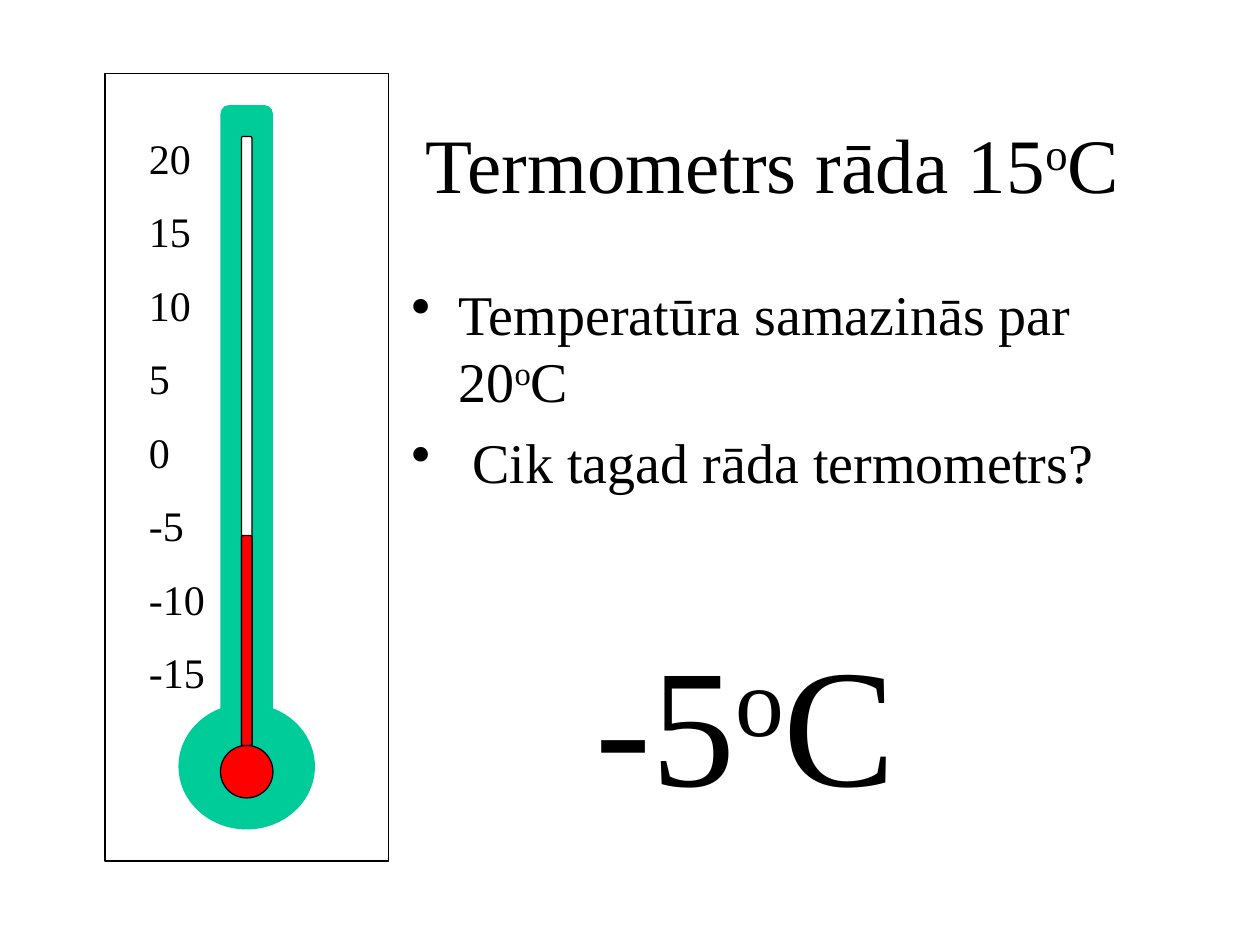
import dataclasses

import pptx
import pptx.dml.color
import pptx.enum.shapes
import pptx.enum.text
import pptx.util
from lxml import etree

Pt = pptx.util.Pt
Shape = pptx.enum.shapes.MSO_SHAPE
Align = pptx.enum.text.PP_ALIGN
Anchor = pptx.enum.text.MSO_ANCHOR
RGB = pptx.dml.color.RGBColor.from_string
DRAWING = "{http://schemas.openxmlformats.org/drawingml/2006/main}"


@dataclasses.dataclass(frozen=True)
class Theme:
    font: str = "Times New Roman"
    ink: str = "000000"
    paper: str = "FFFFFF"
    glass: str = "00CC99"
    mercury: str = "FF0000"
    title: float = 44
    body: float = 32
    scale: float = 24
    answer: float = 96
    outline: float = 0.75
    bullet_indent: float = 27


THEME = Theme()
DEGREE = ("o", 30)


def add_bullet(paragraph):
    properties = paragraph._p.get_or_add_pPr()
    indent = Pt(THEME.bullet_indent)
    properties.set("marL", str(indent))
    properties.set("indent", str(-indent))
    etree.SubElement(properties, DRAWING + "buChar").set("char", "•")


def write_text(shape, paragraphs, size, align=Align.LEFT, anchor=Anchor.TOP,
               wrap=True, first_gap=0, gap=0, bullets=False):
    frame = shape.text_frame
    frame.word_wrap = wrap
    frame.vertical_anchor = anchor
    for index, parts in enumerate(paragraphs):
        paragraph = frame.add_paragraph() if index else frame.paragraphs[0]
        paragraph.alignment = align
        paragraph.space_before = Pt(gap if index else first_gap)
        if bullets:
            add_bullet(paragraph)
        for part in parts:
            text, raised = part if isinstance(part, tuple) else (part, 0)
            run = paragraph.add_run()
            run.text = text
            run.font.name = THEME.font
            run.font.size = Pt(size)
            run.font.color.rgb = RGB(THEME.ink)
            if raised:
                run._r.get_or_add_rPr().set("baseline", str(raised * 1000))


def add_text(shapes, box, paragraphs, size, **text_format):
    shape = shapes.add_textbox(*map(Pt, box))
    write_text(shape, paragraphs, size, **text_format)


def add_filled(shapes, kind, box, fill, outlined=False):
    shape = shapes.add_shape(kind, *map(Pt, box))
    shape.shadow.inherit = False
    shape.fill.solid()
    shape.fill.fore_color.rgb = RGB(fill)
    if outlined:
        shape.line.color.rgb = RGB(THEME.ink)
        shape.line.width = Pt(THEME.outline)
    else:
        shape.line.fill.background()
    return shape


def add_thermometer(slide):
    shapes = slide.shapes.add_group_shape().shapes
    add_filled(shapes, Shape.RECTANGLE, (60, 42, 162, 450), THEME.paper, True)
    add_filled(shapes, Shape.ROUNDED_RECTANGLE, (126, 60, 30, 378), THEME.glass)
    add_filled(shapes, Shape.OVAL, (102, 402, 78, 72), THEME.glass)
    add_filled(shapes, Shape.ROUNDED_RECTANGLE, (138, 78, 6, 360), THEME.paper, True)
    add_filled(shapes, Shape.OVAL, (126, 426, 30, 30), THEME.mercury, True)
    degrees = [[str(degree)] for degree in range(20, -20, -5)]
    add_text(shapes, (78, 72, 60, 338), degrees, THEME.scale, first_gap=3, gap=13.2)
    add_filled(shapes, Shape.ROUNDED_RECTANGLE, (138, 306, 6, 120), THEME.mercury, True)


def add_answer(slide):
    shape = add_filled(slide.shapes, Shape.RECTANGLE, (336, 336, 180, 150), THEME.paper)
    write_text(shape, [["-5", DEGREE, "C"]], THEME.answer,
               align=Align.CENTER, anchor=Anchor.MIDDLE, wrap=False)


def main():
    presentation = pptx.Presentation()
    presentation.slide_width = Pt(720)
    presentation.slide_height = Pt(540)
    slide = presentation.slides.add_slide(presentation.slide_layouts[6])
    add_text(slide.shapes, (228, 48, 438, 90), [["Termometrs rāda 15", DEGREE, "C "]],
             THEME.title, align=Align.CENTER, anchor=Anchor.MIDDLE)
    add_text(slide.shapes, (228, 156, 438, 168),
             [["Temperatūra samazinās par 20", DEGREE, "C"],
              [" Cik tagad rāda termometrs?"]],
             THEME.body, first_gap=3, gap=7.7, bullets=True)
    add_answer(slide)
    add_thermometer(slide)
    presentation.save("out.pptx")


if __name__ == "__main__":
    main()
